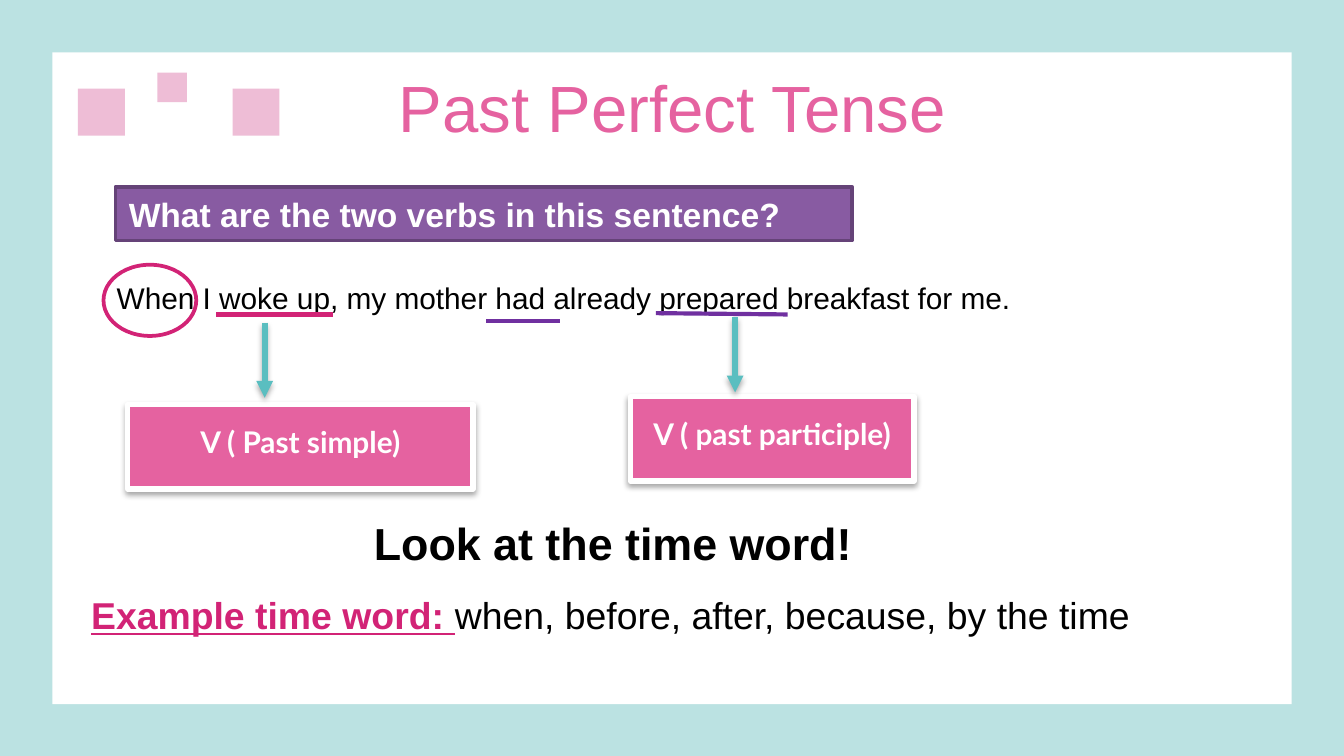
import dataclasses
import lxml.etree
import pptx
import pptx.dml.color
import pptx.enum.shapes
import pptx.enum.text
import pptx.oxml.ns
import pptx.util

SHAPE = pptx.enum.shapes.MSO_SHAPE
ALIGN = pptx.enum.text.PP_ALIGN
ANCHOR = pptx.enum.text.MSO_ANCHOR
Pt = pptx.util.Pt
qn = pptx.oxml.ns.qn


@dataclasses.dataclass(frozen=True)
class Theme:
    back: str = "BBE2E2"
    white: str = "FFFFFF"
    black: str = "000000"
    pink: str = "E562A0"
    pale: str = "EEBDD6"
    rose: str = "D22376"
    plum: str = "885BA2"
    edge: str = "654378"
    violet: str = "7030A0"
    teal: str = "5ABEC0"
    font: str = "Arial"
    tag: str = "Lato"
    head: int = 35
    call: int = 24
    hint: int = 20
    ask: int = 18
    body: int = 16


def color(code):
    return pptx.dml.color.RGBColor.from_string(code)


def cells(*counts):
    return [pptx.util.Inches(count / 10) for count in counts]


class Board:
    def __init__(self, deck, theme):
        self.theme = theme
        self.slide = deck.slides.add_slide(deck.slide_layouts[5])
        fill = self.slide.background.fill
        fill.solid()
        fill.fore_color.rgb = color(theme.back)

    def effect(self, item, shade):
        part = lxml.etree.SubElement(item.element.spPr, qn("a:effectLst"))
        if shade:
            cast = lxml.etree.SubElement(
                part, qn("a:outerShdw"), blurRad=str(Pt(3.1)), dist=str(Pt(1.8)),
                dir="5400000", algn="ctr", rotWithShape="0")
            tint = lxml.etree.SubElement(cast, qn("a:srgbClr"), val=self.theme.black)
            lxml.etree.SubElement(tint, qn("a:alpha"), val="35000")

    def box(self, area, fill=None, line=None, width=2, kind=SHAPE.RECTANGLE, shade=False):
        item = self.slide.shapes.add_shape(kind, *cells(*area))
        if fill:
            item.fill.solid()
            item.fill.fore_color.rgb = color(fill)
        else:
            item.fill.background()
        if line:
            item.line.color.rgb = color(line)
            item.line.width = Pt(width)
        else:
            item.line.fill.background()
        self.effect(item, shade)
        return item

    def line(self, start, end, tint, width=2.25, arrow=False):
        item = self.slide.shapes.add_connector(
            pptx.enum.shapes.MSO_CONNECTOR.STRAIGHT, *cells(*start, *end))
        item.line.color.rgb = color(tint)
        item.line.width = Pt(width)
        if arrow:
            stroke = item.element.spPr.find(qn("a:ln"))
            lxml.etree.SubElement(stroke, qn("a:tailEnd"), type="triangle")
        self.effect(item, arrow)

    def frame(self, item, inset=(1, 0.5), anchor=ANCHOR.TOP):
        frame = item.text_frame
        frame.word_wrap = True
        frame.auto_size = pptx.enum.text.MSO_AUTO_SIZE.NONE
        frame.vertical_anchor = anchor
        side, top = cells(*inset)
        frame.margin_left = frame.margin_right = side
        frame.margin_top = frame.margin_bottom = top
        return frame

    def run(self, para, words, size, tint, bold=False, under=False, font=None, align=ALIGN.LEFT):
        para.alignment = align
        run = para.add_run()
        run.text = words
        run.font.name = font or self.theme.font
        run.font.size = Pt(size)
        run.font.bold = bold
        run.font.underline = under
        run.font.color.rgb = color(tint)

    def title(self, area, words):
        item = self.slide.shapes.title
        item.left, item.top, item.width, item.height = cells(*area)
        para = self.frame(item, (1, 1.4)).paragraphs[0]
        self.run(para, words, self.theme.head, self.theme.pink, align=ALIGN.CENTER)

    def panel(self, area):
        item = self.box(area, self.theme.white)
        self.slide.shapes.title.element.addprevious(item.element)

    def label(self, area, words):
        look = self.theme
        item = self.box(area, look.pink, look.white, 3, shade=True)
        para = self.frame(item, (1, 1)).paragraphs[0]
        para.line_spacing = 1.15
        self.run(para, words, look.body, look.white, True, font=look.tag, align=ALIGN.CENTER)

    def text(self, area):
        return self.frame(self.slide.shapes.add_textbox(*cells(*area)))


def main():
    deck = pptx.Presentation()
    deck.slide_width, deck.slide_height = cells(100, 56.25)
    look = Theme()
    board = Board(deck, look)

    board.panel((3.9, 3.9, 92.2, 48.5))
    board.title((8.5, 3.6, 83.1, 6.3), "Past Perfect Tense")
    for left, top, side in ((5.8, 6.6, 3.5), (17.3, 6.6, 3.5), (11.7, 5.4, 2.2)):
        board.box((left, top, side, side), look.pale)

    board.label((9.5, 30.1, 25.7, 6.3), "V ( Past simple)")
    board.label((46.9, 29.5, 21.1, 6.3), "V ( past participle)")

    ask = board.box((8.6, 13.9, 54.8, 4), look.plum, look.edge)
    board.run(board.frame(ask, anchor=ANCHOR.MIDDLE).paragraphs[0],
              "What are the two verbs in this sentence?", look.ask, look.white, True)

    board.run(board.text((7.7, 20.3, 71, 3.7)).paragraphs[0],
              "When I woke up, my mother had already prepared breakfast for me.",
              look.body, look.black)
    board.box((7.7, 19.7, 6.9, 5.3), line=look.rose, kind=SHAPE.OVAL)

    for start, end, tint in (
        ((16.1, 23.4), (24.8, 23.4), look.rose),
        ((48.8, 23.3), (58.6, 23.4), look.violet),
        ((36.2, 23.9), (41.7, 23.9), look.violet),
    ):
        board.line(start, end, tint)
    for left, top in ((19.7, 24), (54.7, 23.6)):
        board.line((left, top), (left, top + 5.6), look.teal, 3, arrow=True)

    notes = board.text((5.8, 37.9, 79.6, 10.2))
    call = notes.paragraphs[0]
    call.space_after = Pt(12)
    board.run(call, "Look at the time word!", look.call, look.black, True, align=ALIGN.CENTER)
    hint = notes.add_paragraph()
    board.run(hint, "Example time word: ", look.hint, look.rose, True, True)
    board.run(hint, "when, before, after, because, by the time", look.hint, look.black)

    deck.save("out.pptx")


if __name__ == "__main__":
    main()
